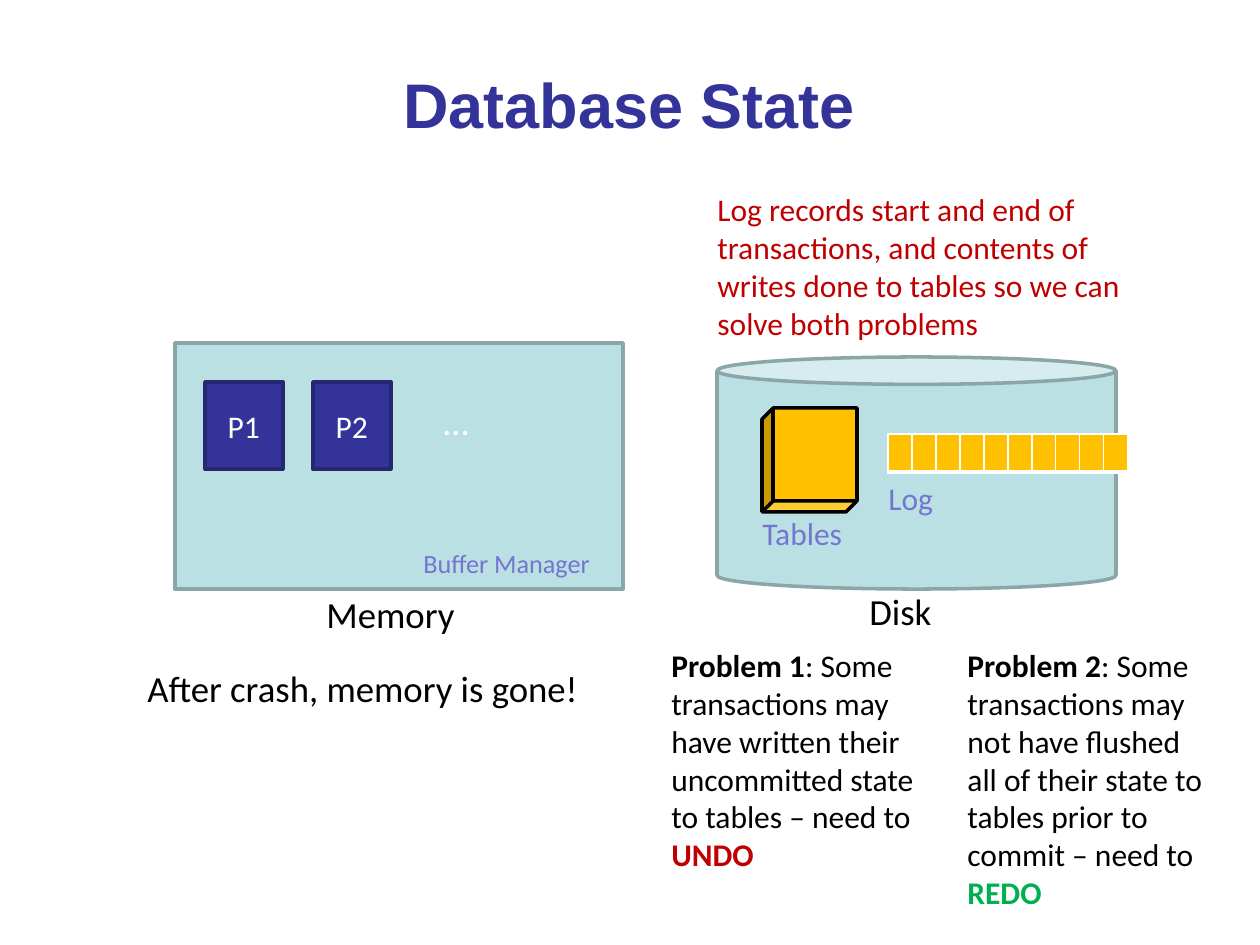
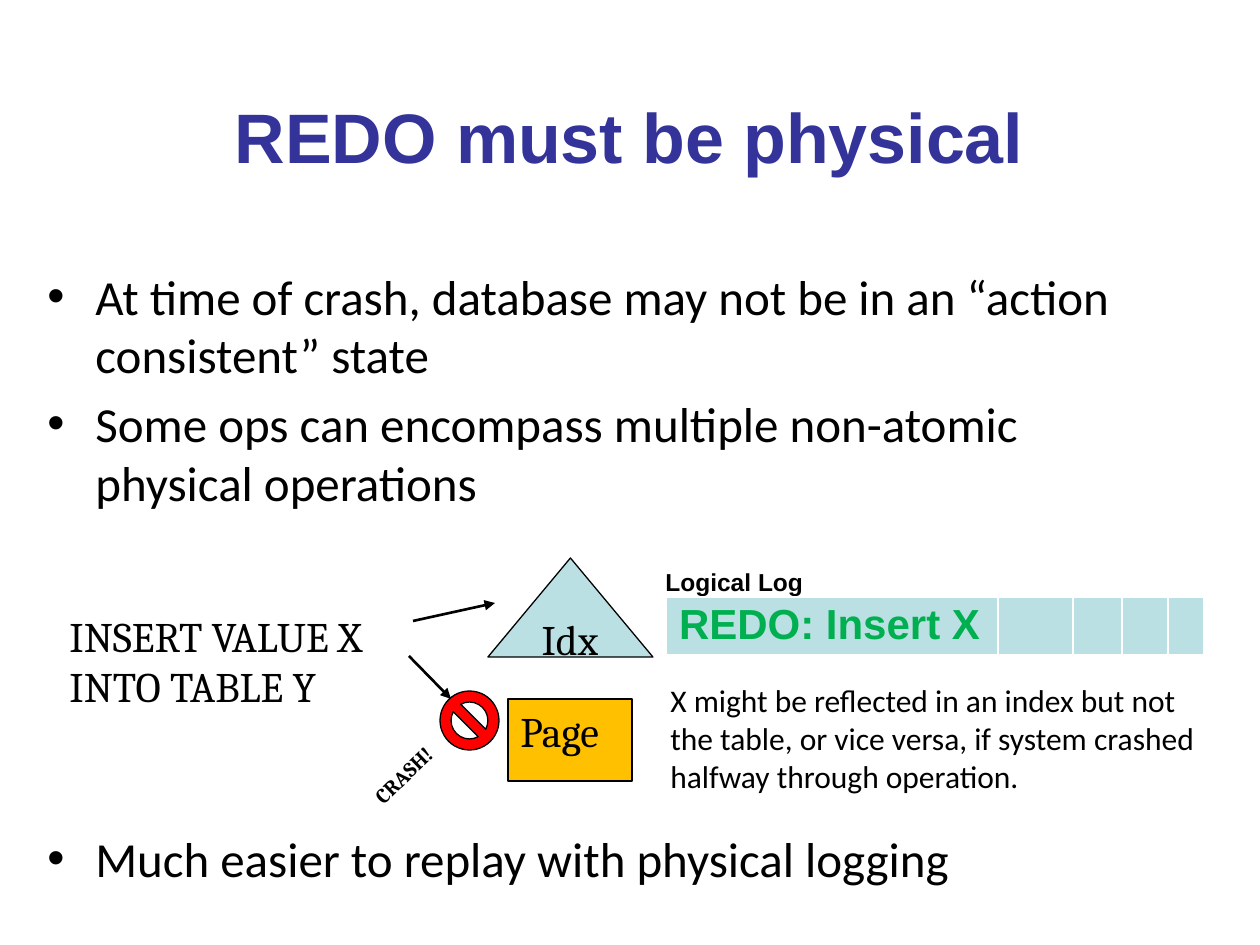
from lxml.etree import SubElement
from pptx import Presentation
from pptx.dml.color import RGBColor
from pptx.enum.shapes import MSO_CONNECTOR as Connector, MSO_SHAPE as Shape
from pptx.enum.text import MSO_ANCHOR as Anchor, PP_ALIGN as Align
from pptx.oxml.ns import qn
from pptx.util import Emu, Pt

NAVY, TEAL, TEAL_EDGE, GOLD = "333399", "BBE0E3", "8AA6A8", "FFC000"
LILAC, CRIMSON, GREEN = "7575D1", "C00000", "00B050"
BLACK, WHITE = "000000", "FFFFFF"
SIDES = {"a:lnL": 1, "a:lnR": 1, "a:lnT": 1, "a:lnB": 3}


def px(length):
    return Emu(round(length * 914400 / 126))


def color(hex_string):
    return RGBColor.from_string(hex_string)


def inside(box, left, top, width, height):
    return box[0] + left, box[1] + top, width, height


def write(frame, text, size=18, font="Calibri", fill=BLACK, bold=False,
          align=Align.LEFT, anchor=Anchor.TOP, bullet=False, gaps=(), inset_right=13):
    frame.word_wrap = True
    frame.vertical_anchor = anchor
    frame.margin_right = px(inset_right)
    paragraphs = text if isinstance(text, list) else [text]
    for index, content in enumerate(paragraphs):
        paragraph = frame.paragraphs[0] if index == 0 else frame.add_paragraph()
        if bullet:
            properties = paragraph._p.get_or_add_pPr()
            properties.set("marL", str(px(48)))
            properties.set("indent", str(px(-48)))
            SubElement(properties, qn("a:buFont")).set("typeface", "Arial")
            SubElement(properties, qn("a:buChar")).set("char", "•")
        paragraph.alignment = align
        if index and gaps:
            paragraph.space_before = Pt(gaps[index - 1])
        pieces = content if isinstance(content, tuple) else ((content, fill, bold),)
        for words, piece_fill, piece_bold in pieces:
            run = paragraph.add_run()
            run.text = words
            run.font.name, run.font.size, run.font.bold = font, Pt(size), piece_bold
            run.font.color.rgb = color(piece_fill)


def label(slide, box, text, rotation=0, **style):
    holder = slide.shapes.add_textbox(*map(px, box))
    holder.rotation = rotation
    write(holder.text_frame, text, **style)


def figure(slide, kind, box, fill, edge=BLACK, weight=2, depth=None, rotation=0):
    drawn = slide.shapes.add_shape(kind, *map(px, box))
    drawn.shadow.inherit = False
    drawn.fill.solid()
    drawn.fill.fore_color.rgb = color(fill)
    drawn.line.color.rgb = color(edge)
    drawn.line.width = Pt(weight)
    drawn.rotation = rotation
    if depth is not None:
        drawn.adjustments[0] = depth
    return drawn


def log_strip(slide, box, widths, fill):
    left, top, height = box
    strip = slide.shapes.add_table(
        1, len(widths), *map(px, (left, top, sum(widths), height))).table
    strip.first_row = strip.horz_banding = False
    strip.rows[0].height = px(height)
    for column, width in zip(strip.columns, widths):
        column.width = px(width)
    for cell in strip.rows[0].cells:
        cell.margin_left = cell.margin_right = cell.margin_top = cell.margin_bottom = 0
        properties = cell._tc.get_or_add_tcPr()
        for side, weight in SIDES.items():
            border = SubElement(properties, qn(side), w=str(Pt(weight)))
            paint = SubElement(border, qn("a:solidFill"))
            SubElement(paint, qn("a:srgbClr"), val=WHITE)
        cell.fill.solid()
        cell.fill.fore_color.rgb = color(fill)
    return strip


def arrow(slide, start, end):
    line = slide.shapes.add_connector(Connector.STRAIGHT, *map(px, start + end))
    line.line.color.rgb = color(BLACK)
    line.line.width = Pt(1.5)
    SubElement(line.line._get_or_add_ln(), qn("a:tailEnd"), type="triangle")
    SubElement(line._element.spPr, qn("a:effectLst"))


def title(slide, box, text, size):
    label(slide, box, text, size=size, font="Arial", fill=NAVY, bold=True,
          align=Align.CENTER, anchor=Anchor.MIDDLE)


def memory(slide, box):
    figure(slide, Shape.RECTANGLE, box, TEAL, TEAL_EDGE)
    for index, name in enumerate(("P1", "P2")):
        page = figure(slide, Shape.RECTANGLE, inside(box, 30 + 108 * index, 39, 78, 87),
                      NAVY, "262671")
        write(page.text_frame, name, fill=WHITE, align=Align.CENTER, anchor=Anchor.MIDDLE)
    label(slide, inside(box, 256, 50, 237, 57), "…", size=21, fill=WHITE)
    label(slide, inside(box, 236, 198, 277, 44), "Buffer Manager", size=15, fill=LILAC)
    label(slide, inside(box, 139, 243, 184, 57), "Memory", size=21)
    label(slide, inside(box, -40, 317, 813, 57), "After crash, memory is gone!", size=21)


def disk(slide, box):
    figure(slide, Shape.CAN, box, TEAL, TEAL_EDGE, depth=0.118)
    figure(slide, Shape.CUBE, inside(box, 45, 51, 95, 104), GOLD, depth=0.117, rotation=180)
    log_strip(slide, (box[0] + 171, box[1] + 77, 38), [24] * 10, GOLD)
    label(slide, inside(box, 140, 226, 139, 57), "Disk", size=21)
    label(slide, inside(box, 33, 151, 139, 50), "Tables", fill=LILAC)
    label(slide, inside(box, 159, 116, 139, 50), "Log", fill=LILAC)
    label(slide, inside(box, -12, -173, 481, 165),
          "Log records start and end of transactions, and contents of writes done to "
          "tables so we can solve both problems", fill=CRIMSON)


def problem(slide, box, heading, explanation, remedy, remedy_fill):
    label(slide, box, [((heading, BLACK, True), (explanation, BLACK, False),
                        (remedy, remedy_fill, True))])


def insert_operation(slide, box):
    label(slide, inside(box, 0, 46, 406, 115), "INSERT VALUE X INTO TABLE Y",
          size=24, font="Cambria")
    index = figure(slide, Shape.ISOSCELES_TRIANGLE, inside(box, 431, 0, 165, 99), TEAL,
                   weight=0.75)
    write(index.text_frame, "Idx", size=24, font="Cambria", inset_right=0)
    page = figure(slide, Shape.RECTANGLE, inside(box, 451, 141, 124, 82), GOLD, weight=0.75)
    write(page.text_frame, "Page", size=24, font="Cambria")
    left, top = box
    arrow(slide, (left + 356, top + 63), (left + 438, top + 45))
    arrow(slide, (left + 352, top + 98), (left + 394, top + 141))
    figure(slide, Shape.NO_SYMBOL, inside(box, 383, 133, 59, 59), "FF0000", weight=0.75)
    label(slide, inside(box, 297, 194, 107, 38), "CRASH!", rotation=316,
          size=12, font="Cambria", bold=True)


def logical_log(slide, box):
    label(slide, inside(box, 0, 0, 286, 43), "Logical Log", size=14, font="Arial", bold=True)
    strip = log_strip(slide, (box[0] + 13, box[1] + 36, 59), (332, 75, 49, 46, 36), TEAL)
    entry = strip.cell(0, 0)
    write(entry.text_frame, "REDO: Insert X", size=24, font="Arial", fill=GREEN, bold=True)
    entry.margin_left, entry.margin_top = px(13), px(5)
    label(slide, inside(box, 5, 114, 567, 127),
          "X might be reflected in an index but not the table, or vice versa, "
          "if system crashed halfway through operation.")


def database_state(slide):
    title(slide, (34, 35, 1191, 136), "Database State", 36)
    memory(slide, (175, 343, 448, 246))
    disk(slide, (717, 357, 399, 232))
    problem(slide, (659, 640, 287, 242), "Problem 1",
            ": Some transactions may have written their uncommitted state to tables – need to ",
            "UNDO", CRIMSON)
    problem(slide, (955, 640, 274, 280), "Problem 2",
            ": Some transactions may not have flushed all of their state to tables prior to "
            "commit – need to ", "REDO", GREEN)


def physical_redo(slide):
    title(slide, (94, 42, 1071, 188), "REDO must be physical", 40)
    label(slide, (35, 260, 1130, 629),
          ["At time of crash, database may not be in an “action consistent” state",
           "Some ops can encompass multiple non-atomic physical operations",
           "Much easier to replay with physical logging"],
          size=28, bullet=True, gaps=(5.6, 181))
    insert_operation(slide, (57, 558))
    logical_log(slide, (653, 561))


def main():
    deck = Presentation()
    deck.slide_width, deck.slide_height = px(1260), px(945)
    for build in (database_state, physical_redo):
        build(deck.slides.add_slide(deck.slide_layouts[6]))
    deck.save("out.pptx")


if __name__ == "__main__":
    main()
